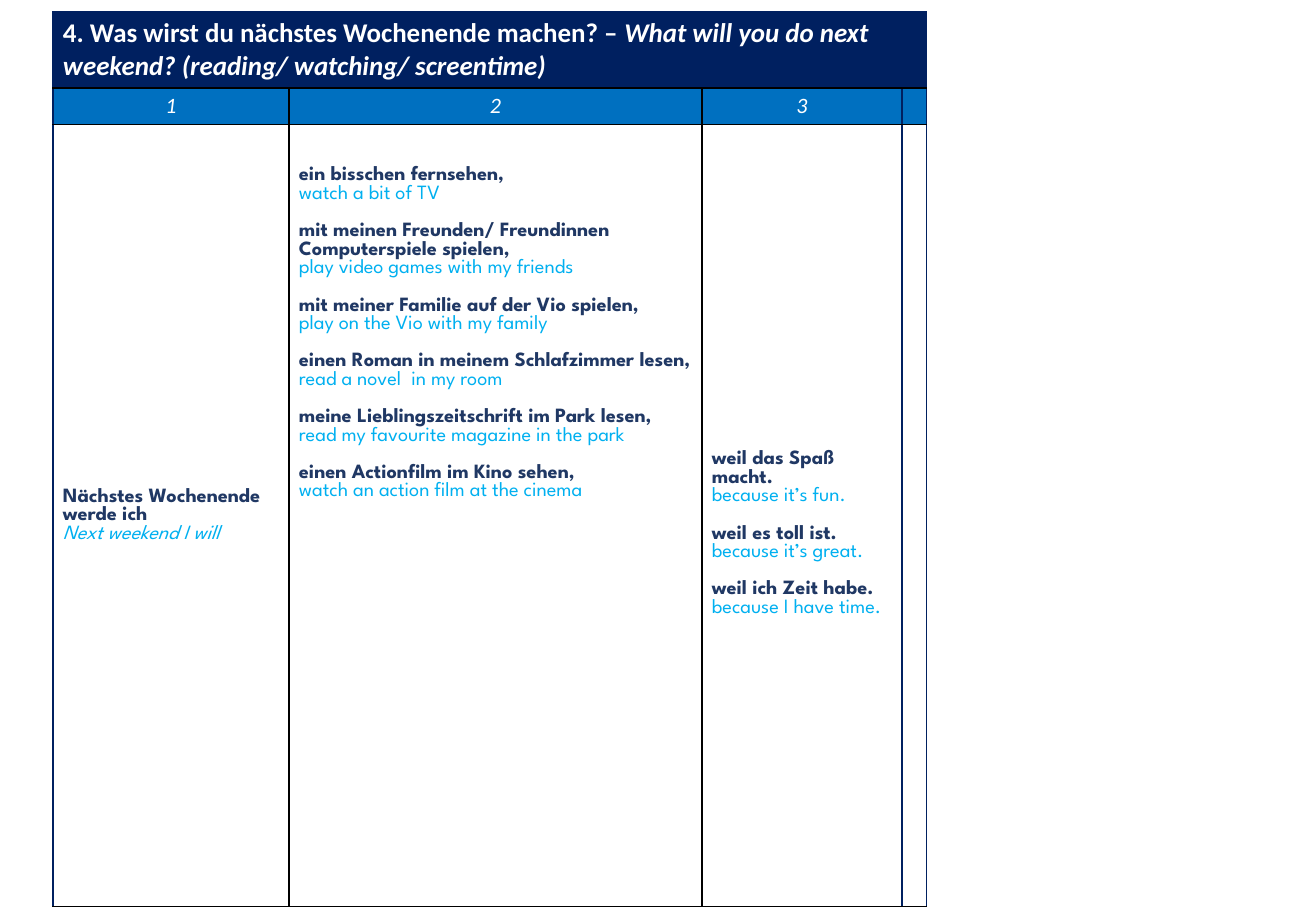
from lxml import etree
from pptx import Presentation
from pptx.dml.color import RGBColor
from pptx.enum.text import MSO_ANCHOR, PP_ALIGN
from pptx.oxml.ns import qn
from pptx.util import Pt

PX = 7526
TOP, MIDDLE = MSO_ANCHOR.TOP, MSO_ANCHOR.MIDDLE
LEFT, CENTER = PP_ALIGN.LEFT, PP_ALIGN.CENTER
NAVY, BLUE, BLACK, WHITE = "002060", "0070C0", "000000", "FFFFFF"
GERMAN, ENGLISH = "203864", "00B0F0"

COLUMN_WIDTHS = [236, 413, 200, 24]
ROW_HEIGHTS = [76, 36, 782]
COLUMN_EDGES = [NAVY, BLACK, BLACK, NAVY, NAVY]
ROW_EDGES = [NAVY, BLACK, BLACK, BLACK]

TITLE = "4. Was wirst du nächstes Wochenende machen? – "
TITLE_ENGLISH = "What will you do next weekend? (reading/ watching/ screentime)"
PHRASES = [
    [("Nächstes Wochenende werde ich", "Next weekend I will")],
    [
        ("ein bisschen fernsehen,", "watch a bit of TV"),
        ("mit meinen Freunden/ Freundinnen Computerspiele spielen,",
         "play video games with my friends"),
        ("mit meiner Familie auf der Vio spielen,", "play on the Vio with my family"),
        ("einen Roman in meinem Schlafzimmer lesen,", "read a novel  in my room"),
        ("meine Lieblingszeitschrift im Park lesen,",
         "read my favourite magazine in the park"),
        ("einen Actionfilm im Kino sehen,", "watch an action film at the cinema"),
    ],
    [
        ("weil das Spaß macht.", "because it’s fun."),
        ("weil es toll ist.", "because it’s great."),
        ("weil ich Zeit habe.", "because I have time."),
    ],
]
PHRASE_ANCHORS = [MIDDLE, TOP, MIDDLE]
PHRASE_TOPS = [5, 42, 42]


def color(value):
    return RGBColor.from_string(value)


def add_text(paragraph, text, size=12, font="League Spartan", fill=WHITE,
             bold=False, italic=False, align=LEFT, before=0):
    paragraph.alignment = align
    paragraph.space_before = Pt(before)
    span = paragraph.add_run()
    span.text = text
    span.font.size = Pt(size)
    span.font.name = font
    span.font.bold = bold
    span.font.italic = italic
    span.font.color.rgb = color(fill)


deck = Presentation()
deck.slide_width, deck.slide_height = 1316 * PX, 911 * PX
page = deck.slides.add_slide(deck.slide_layouts[6])
table = page.shapes.add_table(
    len(ROW_HEIGHTS), len(COLUMN_WIDTHS), 53 * PX, 12 * PX,
    sum(COLUMN_WIDTHS) * PX, sum(ROW_HEIGHTS) * PX).table
table.first_row = False
table.horz_banding = False
for column, width in zip(table.columns, COLUMN_WIDTHS):
    column.width = width * PX
for row, height in zip(table.rows, ROW_HEIGHTS):
    row.height = height * PX

for row_index, row_fill in enumerate([NAVY, BLUE, None]):
    for column_index in range(len(COLUMN_WIDTHS)):
        cell = table.cell(row_index, column_index)
        cell.margin_left = cell.margin_right = 10 * PX
        cell.margin_top = cell.margin_bottom = 5 * PX
        sides = COLUMN_EDGES[column_index:column_index + 2]
        if row_index == 0:
            sides = [NAVY, NAVY]
        edges = sides + ROW_EDGES[row_index:row_index + 2]
        properties = cell._tc.get_or_add_tcPr()
        for tag, edge in zip(["a:lnL", "a:lnR", "a:lnT", "a:lnB"], edges):
            line = etree.SubElement(properties, qn(tag), w=str(Pt(1)))
            solid = etree.SubElement(line, qn("a:solidFill"))
            etree.SubElement(solid, qn("a:srgbClr"), val=edge)
        if row_fill:
            cell.fill.solid()
            cell.fill.fore_color.rgb = color(row_fill)
        else:
            cell.fill.background()
        if column_index == 3:
            paragraph = cell.text_frame.paragraphs[0]
            etree.SubElement(paragraph._p, qn("a:endParaRPr"), sz="1200")

title_cell = table.cell(0, 0)
title_cell.merge(table.cell(0, 2))
title_cell.vertical_anchor = MIDDLE
title = title_cell.text_frame.paragraphs[0]
add_text(title, TITLE, size=16, font="Calibri", bold=True)
add_text(title, TITLE_ENGLISH, size=16, font="Calibri", bold=True, italic=True)

for column_index, phrases in enumerate(PHRASES):
    number = table.cell(1, column_index).text_frame.paragraphs[0]
    add_text(number, str(column_index + 1), size=13, font="Calibri",
             italic=True, align=CENTER)

    cell = table.cell(2, column_index)
    cell.vertical_anchor = PHRASE_ANCHORS[column_index]
    cell.margin_top = PHRASE_TOPS[column_index] * PX
    frame = cell.text_frame
    for index, (german, english) in enumerate(phrases):
        paragraph = frame.add_paragraph() if index else frame.paragraphs[0]
        add_text(paragraph, german, fill=GERMAN, bold=True, before=11 if index else 0)
        add_text(frame.add_paragraph(), english, fill=ENGLISH, italic=column_index == 0)

deck.save("out.pptx")
